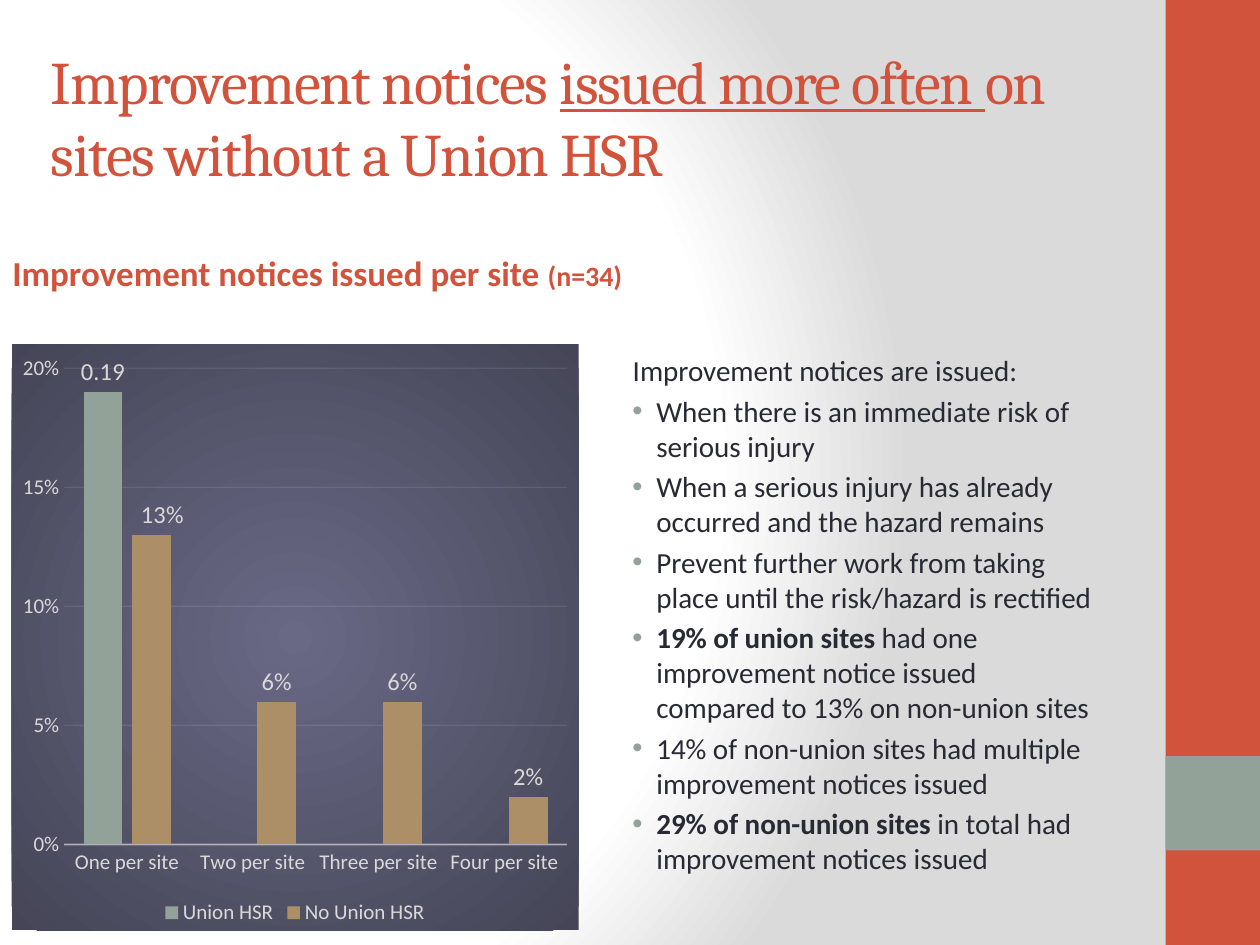
from lxml import etree
from pptx import Presentation
from pptx.chart.data import CategoryChartData
from pptx.dml.color import RGBColor
from pptx.enum.chart import XL_CHART_TYPE, XL_LABEL_POSITION, XL_LEGEND_POSITION, XL_TICK_MARK
from pptx.enum.shapes import MSO_SHAPE
from pptx.enum.text import MSO_ANCHOR
from pptx.oxml import parse_xml
from pptx.oxml.ns import nsdecls, qn
from pptx.util import Pt

RECTANGLE = MSO_SHAPE.RECTANGLE
COLUMNS = XL_CHART_TYPE.COLUMN_CLUSTERED
OUTSIDE_END = XL_LABEL_POSITION.OUTSIDE_END
LEGEND_BOTTOM = XL_LEGEND_POSITION.BOTTOM
NO_TICK = XL_TICK_MARK.NONE
TOP, MIDDLE, BOTTOM = MSO_ANCHOR.TOP, MSO_ANCHOR.MIDDLE, MSO_ANCHOR.BOTTOM

RED = RGBColor(0xD2, 0x53, 0x3C)
SAGE = RGBColor(0x93, 0xA2, 0x99)
TAN = RGBColor(0xAD, 0x8F, 0x67)
INK = RGBColor(0x29, 0x29, 0x34)
WHITE = RGBColor(0xFF, 0xFF, 0xFF)
SILVER = RGBColor(0xDA, 0xDA, 0xDA)
CHART_TEXT = RGBColor(0xD9, 0xD9, 0xD9)
CHART_LINE = RGBColor(0xF2, 0xF2, 0xF2)
CHART_CENTRE = RGBColor(0x69, 0x69, 0x86)
CHART_EDGE = RGBColor(0x45, 0x45, 0x57)

HEADING_FONT, BODY_FONT = "Cambria", "Calibri"

# Each paragraph is a list of (text, bold) runs
INTRODUCTION = [("Improvement notices are issued:", False)]
POINTS = [
    [("When there is an immediate risk of serious injury", False)],
    [("When a serious injury has already occurred and the hazard remains", False)],
    [("Prevent further work from taking place until the risk/hazard is rectified", False)],
    [("19% of union sites ", True),
     ("had one improvement notice issued compared to 13% on non-union sites", False)],
    [("14% of non-union sites had multiple improvement notices issued", False)],
    [("29% of non-union sites ", True),
     ("in total had improvement notices issued", False)],
]
CATEGORIES = ["One per site", "Two per site", "Three per site", "Four per site"]
# Name, values, colour, label format
SERIES = [
    ("Union HSR", [0.19, None, None, None], SAGE, "General"),
    ("No Union HSR", [0.13, 0.06, 0.06, 0.02], TAN, "0%"),
]


def circle_gradient(stops, focus):
    """Gradient fill; focus is left, top, right, bottom in percent."""
    stop_xml = "".join(
        f'<a:gs pos="{position * 1000}"><a:srgbClr val="{color}"/></a:gs>'
        for position, color in stops)
    left, top, right, bottom = (value * 1000 for value in focus)
    return parse_xml(
        f'<a:gradFill {nsdecls("a")} rotWithShape="1"><a:gsLst>{stop_xml}</a:gsLst>'
        f'<a:path path="circle"><a:fillToRect l="{left}" t="{top}" r="{right}" b="{bottom}"/>'
        f'</a:path></a:gradFill>')


def style_font(font, size, color, name=BODY_FONT, bold=False):
    font.size, font.name, font.bold = Pt(size), name, bold
    font.color.rgb = color


def add_run(paragraph, text, *style, **options):
    run = paragraph.add_run()
    run.text = text
    style_font(run.font, *style, **options)
    return run


def add_text_frame(slide, box, anchor):
    frame = slide.shapes.add_textbox(*map(Pt, box)).text_frame
    frame.word_wrap = True
    frame.vertical_anchor = anchor
    return frame


def style_line(line, width, color, opacity):
    line.width = Pt(width)
    line.color.rgb = color
    color_element = line._ln.find(".//" + qn("a:srgbClr"))
    etree.SubElement(color_element, qn("a:alpha")).set("val", str(opacity * 1000))


def add_background(slide):
    slide.background.fill.solid()
    solid = slide.element.find(".//" + qn("p:bgPr")).find(qn("a:solidFill"))
    gradient = circle_gradient([(0, WHITE), (75, WHITE), (100, SILVER)], (20, 50, 100, 50))
    solid.getparent().replace(solid, gradient)


def add_side_band(slide, box):
    left, top, width, height = box
    # Full-height band, then a square one square above its foot
    square = (left, top + height - 2 * width, width, width)
    for part, color in ((box, RED), (square, SAGE)):
        shape = slide.shapes.add_shape(RECTANGLE, *map(Pt, part))
        shape.shadow.inherit = False
        shape.fill.solid()
        shape.fill.fore_color.rgb = color
        shape.line.fill.background()


def add_title(slide, box):
    paragraph = add_text_frame(slide, box, MIDDLE).paragraphs[0]
    for text, underline in (("Improvement notices ", False),
                            ("issued more often ", True),
                            ("on sites without a Union HSR", False)):
        run = add_run(paragraph, text, 34.5, RED, HEADING_FONT)
        run.font.underline = underline
        run.font._element.set("spc", "-80")


def add_chart_heading(slide, box):
    paragraph = add_text_frame(slide, box, BOTTOM).paragraphs[0]
    add_run(paragraph, "Improvement notices issued per site ", 20, RED, bold=True)
    add_run(paragraph, "(n=34)", 16, RED, bold=True)


def add_explanation(slide, box):
    frame = add_text_frame(slide, box, TOP)
    for index, runs in enumerate([INTRODUCTION] + POINTS):
        paragraph = frame.add_paragraph() if index else frame.paragraphs[0]
        paragraph.space_before = Pt(3.3)
        properties = paragraph._p.get_or_add_pPr()
        properties.set("marL", str(Pt(20 if index else 6.5)))
        properties.set("indent", str(Pt(-13.7 if index else 0)))
        if index:
            bullet_color = etree.SubElement(properties, qn("a:buClr"))
            etree.SubElement(bullet_color, qn("a:srgbClr")).set("val", str(SAGE))
            etree.SubElement(properties, qn("a:buFont")).set("typeface", "Arial")
            etree.SubElement(properties, qn("a:buChar")).set("char", "•")
        for text, bold in runs:
            add_run(paragraph, text, 16.6, INK, bold=bold)


def shift_label(series, point, shift, number_format):
    """Move one data label to the right by a share of the chart width."""
    label = series.points[point].data_label
    style_font(label.font, 14, CHART_TEXT)
    label.position = OUTSIDE_END
    element = series.data_labels._element.find(qn("c:dLbl"))
    layout = parse_xml(
        f'<c:layout {nsdecls("c")}><c:manualLayout><c:x val="{shift}"/><c:y val="0"/>'
        f'</c:manualLayout></c:layout>')
    format_element = parse_xml(
        f'<c:numFmt {nsdecls("c")} formatCode="{number_format}" sourceLinked="0"/>')
    element.find(qn("c:idx")).addnext(layout)
    layout.addnext(format_element)


def add_notice_chart(slide, box):
    data = CategoryChartData()
    data.categories = CATEGORIES
    for name, values, _, _ in SERIES:
        data.add_series(name, values)
    chart = slide.shapes.add_chart(COLUMNS, *map(Pt, box), data).chart
    chart.has_title = False
    style_font(chart.font, 10, INK)

    # Chart area
    area = parse_xml(f'<c:spPr {nsdecls("c", "a")}><a:ln><a:noFill/></a:ln></c:spPr>')
    area.insert(0, circle_gradient([(0, CHART_CENTRE), (100, CHART_EDGE)], (50,) * 4))
    chart.element.find(qn("c:chart")).addnext(area)

    # Columns and labels
    plot = chart.plots[0]
    plot.gap_width, plot.overlap, plot.vary_by_categories = 100, -24, False
    for series, (_, _, color, number_format) in zip(plot.series, SERIES):
        series.format.fill.solid()
        series.format.fill.fore_color.rgb = color
        labels = series.data_labels
        labels.show_value = True
        labels.position = OUTSIDE_END
        labels.number_format, labels.number_format_is_linked = number_format, False
        style_font(labels.font, 14, CHART_TEXT)
    shift_label(plot.series[1], 0, 0.02, "0%")

    # Axes
    for axis in (chart.category_axis, chart.value_axis):
        axis.major_tick_mark = axis.minor_tick_mark = NO_TICK
        style_font(axis.tick_labels.font, 12, CHART_TEXT)
    style_line(chart.category_axis.format.line, 1, CHART_LINE, 54)
    values = chart.value_axis
    values.minimum_scale, values.maximum_scale, values.major_unit = 0, 0.2, 0.05
    values.tick_labels.number_format = "0%"
    values.tick_labels.number_format_is_linked = False
    values.format.line.fill.background()
    style_line(values.major_gridlines.format.line, 0.75, CHART_LINE, 10)

    # Legend
    chart.has_legend = True
    chart.legend.position = LEGEND_BOTTOM
    chart.legend.include_in_layout = False
    style_font(chart.legend.font, 12, CHART_TEXT)


def main():
    presentation = Presentation()
    presentation.slide_width, presentation.slide_height = Pt(720), Pt(540)
    slide = presentation.slides.add_slide(presentation.slide_layouts[6])
    add_background(slide)
    add_side_band(slide, (666, 0, 54, 540))
    add_title(slide, (22, 21.6, 614, 90))
    add_chart_heading(slide, (0, 121, 381, 50.4))
    add_notice_chart(slide, (6.6, 196.6, 324, 335))
    add_explanation(slide, (348, 198, 288, 335.5))
    presentation.save("out.pptx")


if __name__ == "__main__":
    main()
